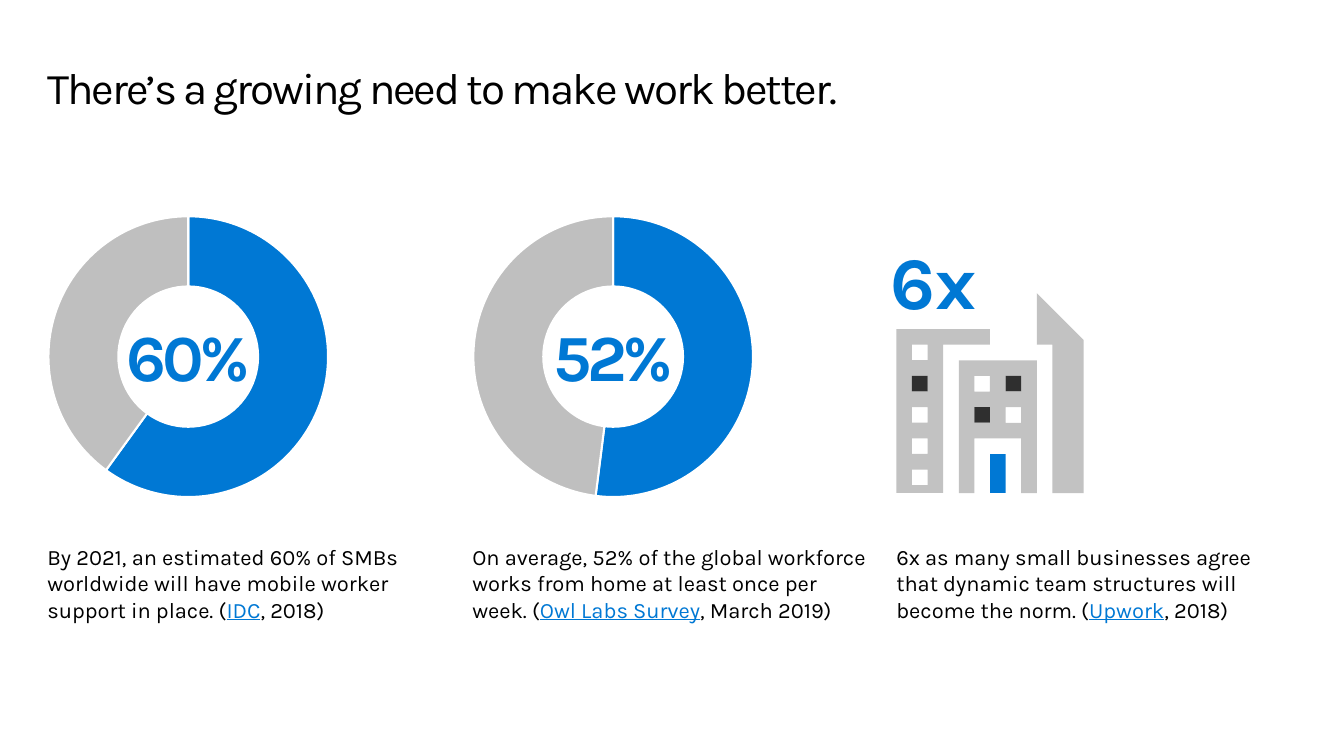
from lxml.etree import SubElement
from pptx import Presentation
from pptx.chart.data import CategoryChartData
from pptx.dml.color import RGBColor
from pptx.enum.chart import XL_CHART_TYPE
from pptx.enum.shapes import MSO_SHAPE
from pptx.enum.text import MSO_ANCHOR, PP_ALIGN
from pptx.oxml.ns import qn
from pptx.util import Inches, Pt

FONT = "Karla"
COLORS = {
    "ink": "000000",
    "label": "282828",
    "accent": "0078D4",
    "rest": "BFBFBF",
    "wall": "C2C2C2",
    "dark pane": "2F2F2F",
    "paper": "FFFFFF",
}
COLUMNS = (0.48, 4.78, 9.07)
UNIT = 0.158
SKYLINE_TOP = 3.33


def color(name):
    return RGBColor.from_string(COLORS[name])


def add_text(slide, box, parts, size, ink="ink", bold=False, spacing=0,
             top_inset=0, centered=False):
    frame = slide.shapes.add_textbox(*map(Inches, box)).text_frame
    frame.word_wrap = True
    frame.margin_left = frame.margin_right = frame.margin_bottom = 0
    frame.margin_top = Inches(top_inset)
    paragraph = frame.paragraphs[0]
    if centered:
        frame.vertical_anchor = MSO_ANCHOR.MIDDLE
        paragraph.alignment = PP_ALIGN.CENTER
    font = paragraph.font
    font.name = FONT
    font.size = Pt(size)
    font.bold = bold
    font.color.rgb = color(ink)
    if spacing:
        font._element.set("spc", str(round(spacing * 100)))
    for part in parts:
        paragraph.add_run().text = part
    return paragraph


def add_caption(slide, left, width, parts):
    caption = add_text(slide, (left, 5.5, width, 0.81), parts, 16)
    citation = caption.runs[1].font
    citation.underline = True
    citation.color.rgb = color("accent")


def fill_plot_area(chart):
    area = chart._chartSpace.chart.plotArea
    for layout in area.findall(qn("c:layout")):
        area.remove(layout)
    layout = SubElement(area, qn("c:layout"))
    area.insert(0, layout)
    manual = SubElement(layout, qn("c:manualLayout"))
    for tag, value in (("layoutTarget", "inner"), ("xMode", "edge"),
                       ("yMode", "edge"), ("x", "0"), ("y", "0.01"),
                       ("w", "1"), ("h", "0.99")):
        SubElement(manual, qn(f"c:{tag}")).set("val", value)
    for hole in area.iter(qn("c:holeSize")):
        hole.set("val", "60")


def add_doughnut(slide, left, share):
    data = CategoryChartData()
    data.categories = ["1", "2"]
    data.add_series("Series 1", (share, 100 - share))
    chart = slide.shapes.add_chart(
        XL_CHART_TYPE.DOUGHNUT, Inches(left), Inches(2.16),
        Inches(2.85), Inches(2.88), data).chart
    chart.has_title = False
    chart.has_legend = False
    chart.font.name = FONT
    chart.font.size = Pt(10)
    chart.font.color.rgb = color("label")
    plot = chart.plots[0]
    plot.has_data_labels = False
    plot.vary_by_categories = True
    for index, name in enumerate(("accent", "rest")):
        slice_format = plot.series[0].points[index].format
        slice_format.fill.solid()
        slice_format.fill.fore_color.rgb = color(name)
        slice_format.line.color.rgb = color("paper")
        slice_format.line.width = Pt(1.5)
    fill_plot_area(chart)
    add_text(slide, (left + 0.62, 3.19, 1.61, 0.81), [f"{share}%"], 48,
             "accent", bold=True, spacing=-3, centered=True)


def paint(shape, name):
    shape.shadow.inherit = False
    shape.fill.solid()
    shape.fill.fore_color.rgb = color(name)
    shape.line.fill.background()


def grid_point(column, row):
    return (Inches(COLUMNS[2] + column * UNIT),
            Inches(SKYLINE_TOP + row * UNIT))


def add_building(skyline, walls, windows=()):
    panes = [[(c, r), (c + 1, r), (c + 1, r + 1), (c, r + 1)]
             for c, r in windows]
    builder = None
    for outline in [walls, *panes]:
        start, *others = [grid_point(*corner) for corner in outline]
        if builder is None:
            builder = skyline.build_freeform(*start)
        else:
            builder.move_to(*start)
        builder.add_line_segments(others, close=True)
    paint(builder.convert_to_shape(), "wall")


def add_opening(skyline, column, row, height, name):
    opening = skyline.add_shape(
        MSO_SHAPE.RECTANGLE, *grid_point(column, row),
        Inches(UNIT), Inches(height * UNIT))
    paint(opening, name)


def add_skyline(slide):
    skyline = slide.shapes.add_group_shape().shapes
    add_building(
        skyline,
        [(3, 1), (6, 1), (6, 0), (0, 0), (0, 10.5), (3, 10.5)],
        [(1, row) for row in range(1, 10, 2)])
    add_building(
        skyline,
        [(9, 10.5), (9, 2), (4, 2), (4, 10.5), (5, 10.5), (5, 7),
         (8, 7), (8, 10.5)],
        [(column, row) for column in (5, 7) for row in (3, 5)])
    add_building(
        skyline,
        [(12, 10.5), (12, 0.7), (9, -2.3), (9, 1), (10, 1), (10, 10.5)])
    add_opening(skyline, 6, 8, 2.5, "accent")
    for column, row in ((1, 3), (5, 5), (7, 3)):
        add_opening(skyline, column, row, 1, "dark pane")


def main():
    deck = Presentation()
    deck.slide_width = Inches(13.6)
    deck.slide_height = Inches(7.65)
    slide = deck.slides.add_slide(deck.slide_layouts[6])

    title = add_text(slide, (0.48, 0.49, 12.65, 0.82),
                     ["There’s a growing need to make work better."],
                     32, spacing=-1.5, top_inset=0.18)
    title.line_spacing = 0.9

    for left, share in zip(COLUMNS, (60, 52)):
        add_doughnut(slide, left, share)

    add_text(slide, (9.01, 2.38, 1.13, 0.91), ["6x"], 54, "accent", bold=True)
    add_skyline(slide)

    captions = (
        (3.82, ("By 2021, an estimated 60% of SMBs worldwide will have "
                "mobile worker support in place. (", "IDC", ", 2018)")),
        (4.04, ("On average, 52% of the global workforce works from home "
                "at least once per week. (", "Owl Labs Survey",
                ", March 2019)")),
        (4.06, ("6x as many small businesses agree that dynamic team "
                "structures will become the norm. (", "Upwork", ", 2018)")),
    )
    for left, (width, parts) in zip(COLUMNS, captions):
        add_caption(slide, left, width, parts)

    deck.save("out.pptx")


if __name__ == "__main__":
    main()
